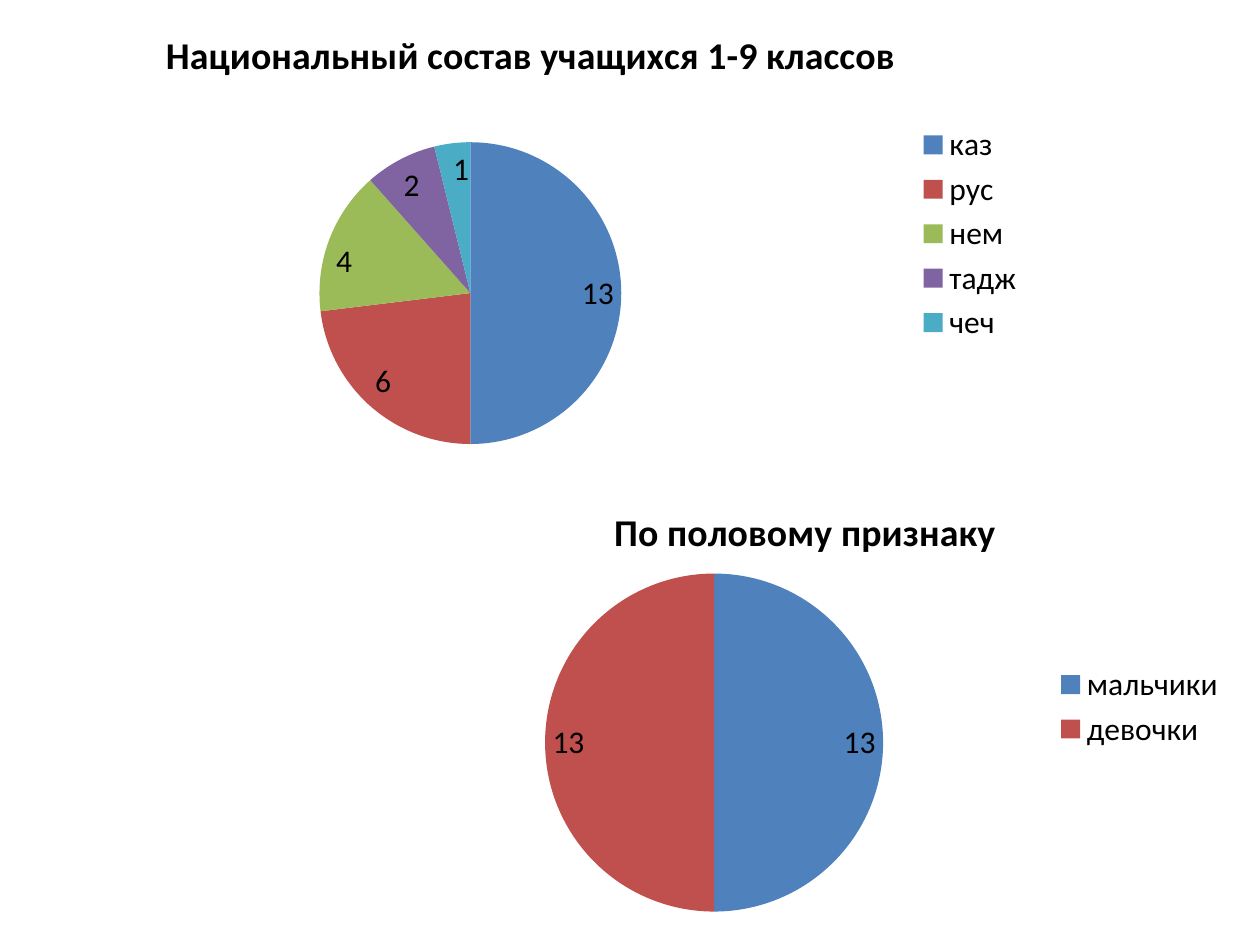
from lxml import etree
from pptx import Presentation
from pptx import util as u
from pptx.chart.data import CategoryChartData
from pptx.dml.color import RGBColor
from pptx.enum import chart as kinds
from pptx.oxml.ns import qn

COLORS = {
    "text": "000000",
    "blue": "4F81BD",
    "red": "C0504D",
    "green": "9BBB59",
    "purple": "8064A2",
    "teal": "4BACC6",
}
SLICE_COLORS = ["blue", "red", "green", "purple", "teal"]
FONT = "Calibri"


def write_text(frame, words, size=18, bold=False, color="text"):
    run = frame.paragraphs[0].add_run()
    run.text = words
    run.font.name = FONT
    run.font.size = u.Pt(size)
    run.font.bold = bold
    run.font.color.rgb = RGBColor.from_string(COLORS[color])


def place_plot(pie, **fractions):
    plot_area = pie._chartSpace.find(".//" + qn("c:plotArea"))
    for old in plot_area.findall(qn("c:layout")):
        plot_area.remove(old)
    layout = etree.Element(qn("c:layout"))
    manual = etree.SubElement(layout, qn("c:manualLayout"))
    settings = {"layoutTarget": "inner", "xMode": "edge", "yMode": "edge", **fractions}
    for tag, value in settings.items():
        etree.SubElement(manual, qn("c:" + tag)).set("val", str(value))
    plot_area.insert(0, layout)


prs = Presentation()
prs.slide_width = u.Inches(10)
prs.slide_height = u.Inches(7.5)
slide = prs.slides.add_slide(prs.slide_layouts[6])

breakdowns = [
    {
        "title": "Национальный состав учащихся 1-9 классов",
        "counts": {"каз": 13, "рус": 6, "нем": 4, "тадж": 2, "чеч": 1},
        "box": (0.2, 0.04, 8.03, 3.63),
        "plot": {"x": 0.29, "y": 0.3, "w": 0.3, "h": 0.66},
    },
    {
        "title": "По половому признаку",
        "counts": {"мальчики": 13, "девочки": 13},
        "box": (2.95, 3.83, 6.88, 3.56),
        "plot": {"x": 0.2, "y": 0.2, "w": 0.39, "h": 0.76},
    },
]

for breakdown in breakdowns:
    pupils = CategoryChartData()
    pupils.categories = list(breakdown["counts"])
    pupils.add_series("Series 1", breakdown["counts"].values())
    box = [u.Inches(length) for length in breakdown["box"]]
    pie = slide.shapes.add_chart(kinds.XL_CHART_TYPE.PIE, *box, pupils).chart

    pie.font.name = FONT
    pie.font.size = u.Pt(18)
    pie.font.color.rgb = RGBColor.from_string(COLORS["text"])
    pie.has_title = True
    write_text(pie.chart_title.text_frame, breakdown["title"], size=21.6, bold=True)
    pie.chart_title.include_in_layout = False
    pie.has_legend = True
    pie.legend.position = kinds.XL_LEGEND_POSITION.RIGHT
    pie.legend.include_in_layout = False
    place_plot(pie, **breakdown["plot"])

    plot = pie.plots[0]
    plot.vary_by_categories = True
    plot.has_data_labels = True
    plot.data_labels.show_value = True
    plot.data_labels.show_percentage = False
    plot.data_labels.position = kinds.XL_LABEL_POSITION.INSIDE_END
    for index, color in enumerate(SLICE_COLORS[:len(breakdown["counts"])]):
        fill = plot.series[0].points[index].format.fill
        fill.solid()
        fill.fore_color.rgb = RGBColor.from_string(COLORS[color])

prs.save("out.pptx")
